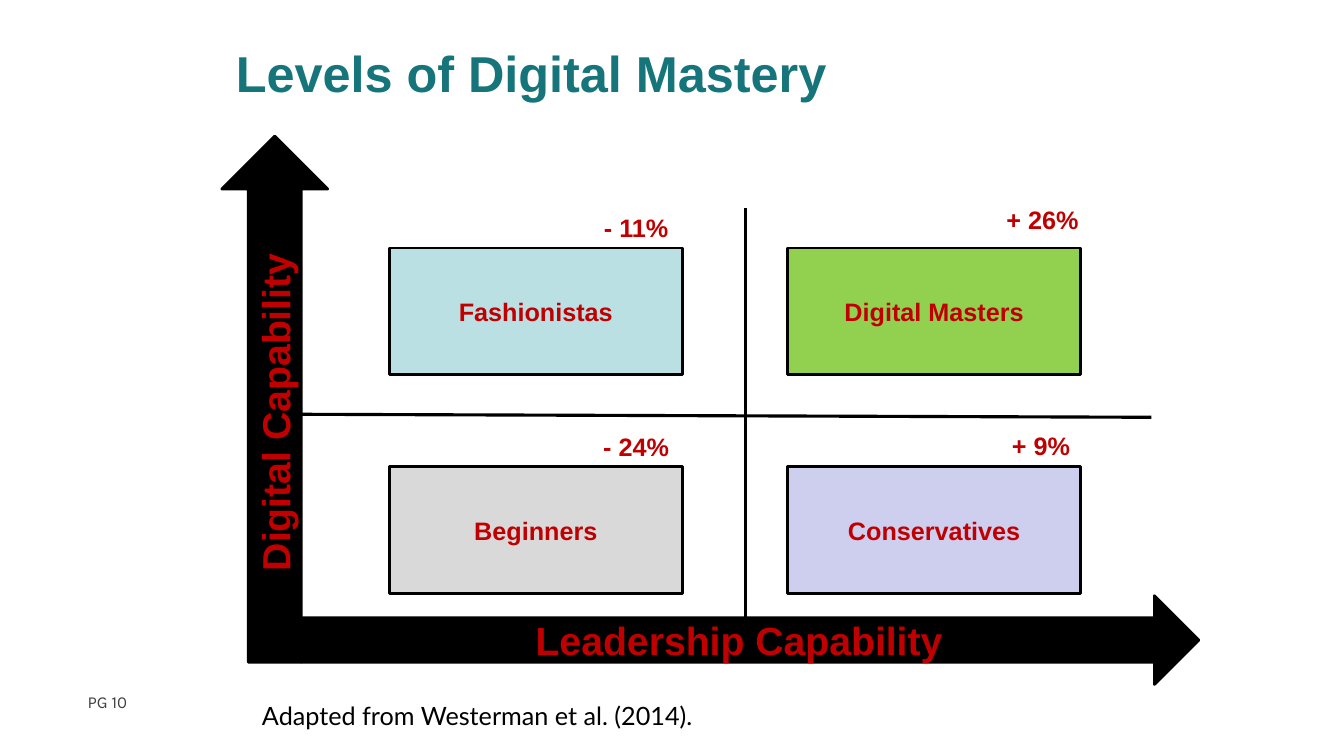
from lxml import etree
from pptx import Presentation
from pptx import util as u
from pptx.dml.color import RGBColor
from pptx.enum import shapes, text
from pptx.oxml.ns import qn

PX = 9144  # EMU per px, at 100 px to the inch
BLACK = RGBColor(0x00, 0x00, 0x00)
RED = RGBColor(0xC0, 0x00, 0x00)
TEAL = RGBColor(0x16, 0x75, 0x7B)
DARK_GREY = RGBColor(0x41, 0x40, 0x3E)
PALE_BLUE = RGBColor(0xBB, 0xE0, 0xE3)
GREEN = RGBColor(0x92, 0xD0, 0x50)
GREY = RGBColor(0xD9, 0xD9, 0xD9)
LAVENDER = RGBColor(0xCE, 0xCE, 0xEF)

presentation = Presentation()
presentation.slide_width = 1333 * PX
presentation.slide_height = 750 * PX
slide = presentation.slides.add_slide(presentation.slide_layouts[6])


def write(shape, words, size, color, font="Arial", bold=True):
    paragraph = shape.text_frame.paragraphs[0]
    paragraph.text = words
    run_font = paragraph.runs[0].font
    run_font.name = font
    run_font.size = u.Pt(size)
    run_font.bold = bold
    run_font.color.rgb = color


def add_label_shape(kind, box, words, size, fill=None):
    """Add a preset shape with a centred red label; without a fill it has no outline either."""
    shape = slide.shapes.add_shape(kind, *(n * PX for n in box))
    shape.shadow.inherit = False
    if fill is None:
        shape.fill.background()
        shape.line.fill.background()
    else:
        shape.fill.solid()
        shape.fill.fore_color.rgb = fill
        shape.line.color.rgb = BLACK
        shape.line.width = u.Pt(2)
    write(shape, words, size, RED)
    shape.text_frame.vertical_anchor = text.MSO_ANCHOR.MIDDLE
    shape.text_frame.paragraphs[0].alignment = text.PP_ALIGN.CENTER
    return shape


# Page number, title and source line
for box, wrap, words, size, color, font, bold in [
    ((77, 681, 300, 40), True, "PG 10", 12, DARK_GREY, "Karla", False),
    ((224, 37, 986, 83), True, "Levels of Digital Mastery", 36, TEAL, "Arial", True),
    ((250, 690, 458, 40), False, "Adapted from Westerman et al. (2014).", 18, BLACK, "Lato", False),
]:
    text_box = slide.shapes.add_textbox(*(n * PX for n in box))
    text_box.text_frame.word_wrap = wrap
    write(text_box, words, size, color, font, bold)

# Axes
digital_axis = add_label_shape(
    shapes.MSO_SHAPE.UP_ARROW, (220, 135, 105, 522), "Digital Capability", 28, BLACK)
digital_axis.text_frame._txBody.bodyPr.set("vert", "vert270")
add_label_shape(
    shapes.MSO_SHAPE.RIGHT_ARROW, (299, 591, 890, 88), "Leadership Capability", 28, BLACK)

# Quadrants, each with its percentage above
LEFT, RIGHT = 386, 781
TOP, BOTTOM = 246, 463
for left, top, name, fill, percentage, percentage_box in [
    (LEFT, TOP, "Fashionistas", PALE_BLUE, "- 11%", (523, 198, 216, 55)),
    (RIGHT, TOP, "Digital Masters", GREEN, "+ 26%", (926, 190, 216, 55)),
    (LEFT, BOTTOM, "Beginners", GREY, "- 24%", (523, 415, 216, 55)),
    (RIGHT, BOTTOM, "Conservatives", LAVENDER, "+ 9%", (951, 414, 163, 55)),
]:
    add_label_shape(shapes.MSO_SHAPE.RECTANGLE, (left, top, 291, 126), name, 18, fill)
    add_label_shape(shapes.MSO_SHAPE.OVAL, percentage_box, percentage, 18)

# Dividers between the quadrants
for ends in [(739, 206, 739, 616), (297, 411, 1142, 414)]:
    divider = slide.shapes.add_connector(
        shapes.MSO_CONNECTOR.STRAIGHT, *(n * PX for n in ends))
    divider.line.color.rgb = BLACK
    divider.line.width = u.Pt(2.25)
    etree.SubElement(divider._element.spPr, qn("a:effectLst"))

presentation.save("out.pptx")
